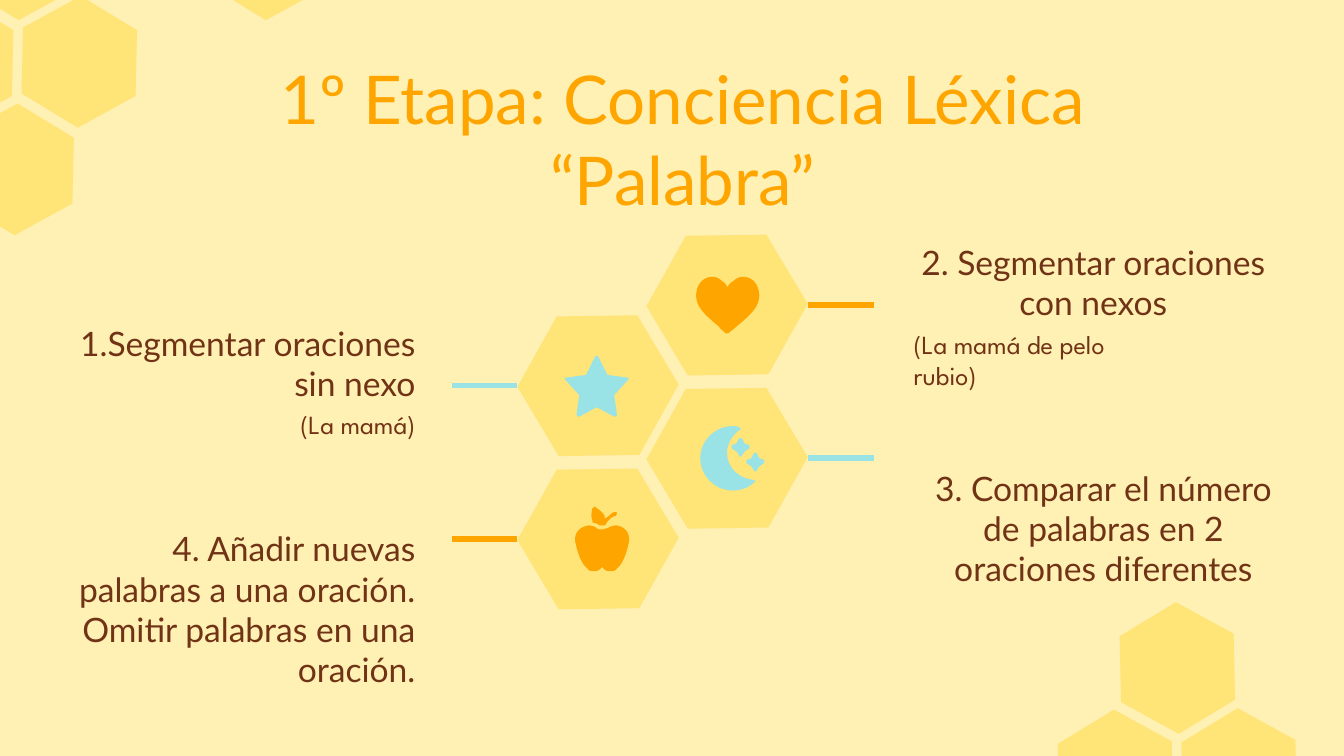
from dataclasses import dataclass
from math import cos, radians, sin

from lxml.etree import SubElement
from pptx import Presentation
from pptx.dml.color import RGBColor
from pptx.enum.shapes import MSO_CONNECTOR
from pptx.enum.text import MSO_ANCHOR, MSO_AUTO_SIZE, PP_ALIGN
from pptx.oxml.ns import qn
from pptx.util import Inches, Pt


@dataclass(frozen=True)
class Theme:
    background: str = "FFF0B3"
    honey: str = "FFDB45"
    honey_opacity: int = 54
    orange: str = "FFA500"
    aqua: str = "99E2E6"
    brown: str = "703316"
    font: str = "Lato"
    note_font: str = "League Spartan"
    title_size: int = 36
    step_size: int = 18
    note_size: int = 14
    line_width: int = 3


THEME = Theme()

# Outlines in hundredths of an inch from the centre of the icon:
# two numbers are a corner, six numbers are a Bézier curve.
HEART = [
    (-11, -21), (-18, -21, -23, -15, -23, -7), (-23, 1, -17, 7, -6, 16),
    (-5, 18, -3, 19, -1, 21), (0, 21, 0, 21, 1, 21), (3, 19, 5, 18, 7, 16),
    (18, 7, 24, 1, 24, -7), (24, -15, 19, -21, 12, -21),
    (9, -21, 7, -20, 5, -18), (3, -17, 1, -15, 0, -13),
    (0, -15, -2, -17, -4, -18), (-6, -20, -8, -21, -11, -21),
]
STAR = [
    (-1, -22), (-2, -22), (-9, -8), (-24, -6), (-25, -6, -25, -5, -24, -4),
    (-14, 7), (-16, 21), (-16, 22, -16, 23, -14, 23), (-1, 16), (12, 23),
    (14, 23, 14, 22, 14, 21), (12, 7), (22, -4), (23, -5, 23, -6, 22, -6),
    (7, -8), (0, -22),
]
APPLE = [
    (-7, -10), (-14, -9, -18, -4, -17, 2), (-15, 12, -12, 19, -8, 22),
    (-7, 24, -5, 24, -3, 24), (0, 24, 1, 23, 2, 22), (3, 21), (4, 22),
    (5, 23, 6, 24, 8, 24), (11, 24, 13, 24, 14, 22), (18, 19, 21, 12, 23, 2),
    (24, -4, 20, -9, 14, -10), (11, -10, 9, -9, 7, -8), (6, -8, 5, -7, 3, -7),
    (1, -7, 0, -7, -1, -8), (-2, -9, -5, -10, -7, -10),
]
LEAF = [
    (-2, -24), (-3, -24, -3, -23, -4, -23), (-4, -23, -6, -18, -4, -13),
    (-4, -12), (-2, -12, 0, -11, 1, -10), (5, -10), (6, -11),
    (6, -12, 8, -14, 9, -15), (10, -16, 12, -17, 13, -17),
    (14, -18, 14, -19, 14, -19), (14, -20, 13, -20, 12, -20),
    (12, -20, 10, -19, 8, -17), (5, -15), (5, -16, 5, -16, 5, -17),
    (3, -21, -2, -23, -2, -24),
]
MOON = [
    (4, -24), (-9, -24, -20, -13, -20, 0), (-20, 13, -9, 24, 4, 24),
    (10, 24, 16, 22, 20, 18), (21, 18, 21, 17, 21, 17), (20, 16, 20, 16, 19, 16),
    (9, 15, 0, 7, 0, -4), (0, -11, 4, -17, 9, -21), (11, -21, 10, -23, 9, -23),
    (7, -24, 6, -24, 4, -24),
]
SPARKLE = [
    (0, -7), (-1, -7), (-3, -3), (-6, -2), (-7, -1, -7, 0, -6, 1), (-3, 3),
    (-1, 6), (-1, 7, 1, 7, 1, 6), (3, 3), (6, 1), (7, 0, 7, -1, 6, -2),
    (3, -3), (1, -7),
]


def rgb(color):
    return RGBColor.from_string(color)


def polygon(slide, points, color, opacity=100):
    """Draw a closed outline through points given in inches."""
    points = [(Inches(x), Inches(y)) for x, y in points]
    builder = slide.shapes.build_freeform(*points[0])
    builder.add_line_segments(points[1:], close=True)
    sp = builder.convert_to_shape()
    sp.shadow.inherit = False
    sp.line.fill.background()
    sp.fill.solid()
    sp.fill.fore_color.rgb = rgb(color)
    if opacity < 100:
        clr = sp._element.spPr.find(".//" + qn("a:srgbClr"))
        SubElement(clr, qn("a:alpha")).set("val", str(opacity * 1000))


def hexagon(slide, cx, cy, radius, turn):
    angles = [radians(turn + 60 * i) for i in range(6)]
    points = [(cx + radius * cos(a), cy + radius * sin(a)) for a in angles]
    polygon(slide, points, THEME.honey, THEME.honey_opacity)


def flatten(outline, steps=8):
    """Turn corners and Bézier curves into a list of points."""
    points = []
    for seg in outline:
        if len(seg) == 2:
            points.append(seg)
            continue
        ctrl = [points[-1], seg[:2], seg[2:4], seg[4:]]
        for t in (i / steps for i in range(1, steps + 1)):
            weights = ((1 - t) ** 3, 3 * t * (1 - t) ** 2, 3 * t * t * (1 - t), t ** 3)
            points.append(tuple(sum(w * c[k] for w, c in zip(weights, ctrl)) for k in (0, 1)))
    return points


def cell(slide, cx, cy, side, color, icon):
    """Honeycomb cell with an icon and a line to the left (-1) or right (1)."""
    hexagon(slide, cx, cy, 0.6, -0.8)
    for outline, dx, dy in icon:
        points = [(cx + dx + x / 100, cy + dy + y / 100) for x, y in flatten(outline)]
        polygon(slide, points, color)
    line = slide.shapes.add_connector(
        MSO_CONNECTOR.STRAIGHT, Inches(cx + side * 0.6), Inches(cy),
        Inches(cx + side * 1.09), Inches(cy))
    line.line.color.rgb = rgb(color)
    line.line.width = Pt(THEME.line_width)
    SubElement(line._element.spPr, qn("a:effectLst"))


def write(sp, text, size, color, font, align, anchor):
    tf = sp.text_frame
    tf.word_wrap = True
    tf.auto_size = MSO_AUTO_SIZE.NONE
    tf.vertical_anchor = anchor
    tf.margin_left = tf.margin_right = tf.margin_top = tf.margin_bottom = Inches(0.1)
    p = tf.paragraphs[0]
    p.text = text
    p.alignment = align
    p.font.size = Pt(size)
    p.font.name = font
    p.font.color.rgb = rgb(color)


def title(slide, box, text):
    sp = slide.shapes.title
    sp.left, sp.top, sp.width, sp.height = map(Inches, box)
    write(sp, text, THEME.title_size, THEME.orange, THEME.font,
          PP_ALIGN.CENTER, MSO_ANCHOR.TOP)


def step(slide, box, text, align):
    sp = slide.shapes.add_textbox(*map(Inches, box))
    write(sp, text, THEME.step_size, THEME.brown, THEME.font, align, MSO_ANCHOR.BOTTOM)


def note(slide, box, text, align):
    sp = slide.shapes.add_textbox(*map(Inches, box))
    write(sp, text, THEME.note_size, THEME.brown, THEME.note_font, align, MSO_ANCHOR.TOP)


def corners(slide):
    for cx, cy in ((9.22, 5.76), (8.76, 4.97), (8.3, 5.77)):
        hexagon(slide, cx, cy, 0.49, 28.7)
    for cx, cy in ((1.99, -0.34), (0.15, -0.34), (0.59, 0.46), (0.12, 1.26), (-0.33, 0.46)):
        hexagon(slide, cx, cy, 0.49, 31.3)


def main():
    prs = Presentation()
    prs.slide_width, prs.slide_height = Inches(10), Inches(10 * 9 / 16)
    slide = prs.slides.add_slide(prs.slide_layouts[5])
    slide.background.fill.solid()
    slide.background.fill.fore_color.rgb = rgb(THEME.background)

    corners(slide)
    title(slide, (0.59, 0.33, 8.98, 0.73), "1º Etapa: Conciencia Léxica\v“Palabra”")

    right, center = PP_ALIGN.RIGHT, PP_ALIGN.CENTER
    step(slide, (0.37, 1.9, 2.82, 1.2), "1.Segmentar oraciones sin nexo", right)
    note(slide, (1.07, 2.94, 2.12, 0.81), "(La mamá)", right)
    step(slide, (6.7, 2.04, 2.87, 0.46), "2. Segmentar oraciones con nexos", center)
    note(slide, (6.7, 2.34, 2.12, 0.81), "(La mamá de pelo rubio)", PP_ALIGN.LEFT)
    step(slide, (6.7, 3.01, 3.02, 1.47),
         "3. Comparar el número de palabras en 2 oraciones diferentes", center)
    step(slide, (0.22, 3.51, 2.97, 1.72),
         "4. Añadir nuevas palabras a una oración.\vOmitir palabras en una oración.", right)

    cell(slide, 5.41, 2.27, 1, THEME.orange, [(HEART, 0, 0)])
    cell(slide, 4.45, 2.87, -1, THEME.aqua, [(STAR, 0, 0)])
    cell(slide, 4.45, 4.01, -1, THEME.orange, [(APPLE, 0, 0), (LEAF, 0, 0)])
    cell(slide, 5.41, 3.41, 1, THEME.aqua,
         [(SPARKLE, 0.1, -0.08), (SPARKLE, 0.21, 0.03), (MOON, 0, 0)])

    prs.save("out.pptx")


if __name__ == "__main__":
    main()
